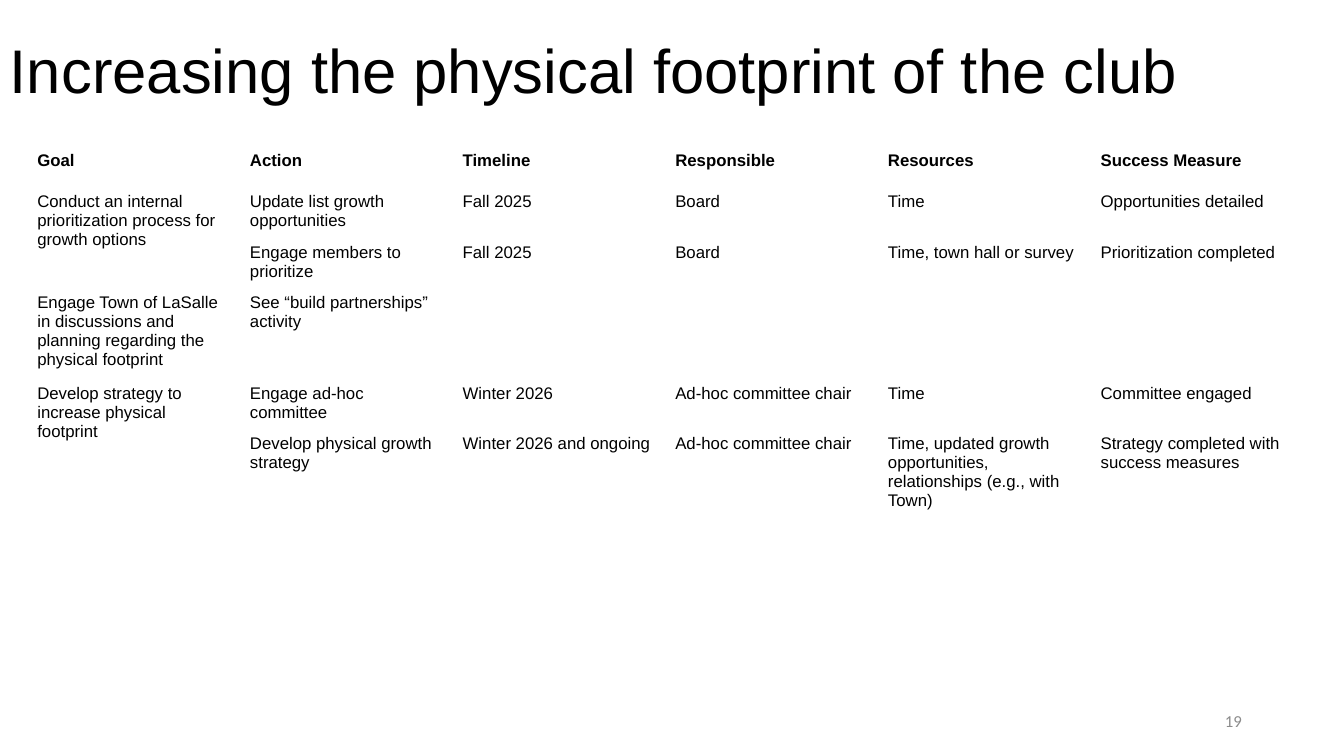
import pptx
import pptx.dml.color
import pptx.enum.text
import pptx.util

Pt = pptx.util.Pt
ALIGN = pptx.enum.text.PP_ALIGN
COLORS = {"text": "000000", "page_number": "8C8C8C"}

HEADINGS = ["Goal", "Action", "Timeline", "Responsible", "Resources", "Success Measure"]
# Each goal spans the rows of its actions.
GOALS = [
    ("Conduct an internal prioritization process for growth options", [
        ["Update list growth opportunities", "Fall 2025", "Board", "Time",
         "Opportunities detailed"],
        ["Engage members to prioritize", "Fall 2025", "Board",
         "Time, town hall or survey", "Prioritization completed"],
    ]),
    ("Engage Town of LaSalle in discussions and planning regarding the physical footprint", [
        ["See “build partnerships” activity", "", "", "", ""],
    ]),
    ("Develop strategy to increase physical footprint", [
        ["Engage ad-hoc committee", "Winter 2026", "Ad-hoc committee chair", "Time",
         "Committee engaged"],
        ["Develop physical growth strategy", "Winter 2026 and ongoing",
         "Ad-hoc committee chair",
         "Time, updated growth opportunities, relationships (e.g., with Town)",
         "Strategy completed with success measures"],
    ]),
]
ROW_HEIGHTS = [29.5, 29.5, 31.7, 32.4, 29.5, 29.5]
COLUMN_WIDTH = 151.92


class PlanSlide:
    def __init__(self, slide):
        self.slide = slide

    def style(self, paragraph, size, font="Arial", color="text", bold=False):
        paragraph.font.size = Pt(size)
        for run in paragraph.runs:
            run.font.size = Pt(size)
            run.font.name = font
            run.font.bold = bold
            run.font.color.rgb = pptx.dml.color.RGBColor.from_string(COLORS[color])

    def text(self, words, left, top, width, height, size, align=ALIGN.LEFT,
             spacing=1.0, **look):
        box = self.slide.shapes.add_textbox(Pt(left), Pt(top), Pt(width), Pt(height))
        frame = box.text_frame
        frame.word_wrap = True
        frame.vertical_anchor = pptx.enum.text.MSO_ANCHOR.MIDDLE
        frame.text = words
        paragraph = frame.paragraphs[0]
        paragraph.alignment = align
        paragraph.line_spacing = spacing
        self.style(paragraph, size, **look)

    def table(self, rows, left, top, height):
        columns = len(rows[0])
        frame = self.slide.shapes.add_table(
            len(rows), columns, Pt(left), Pt(top), Pt(COLUMN_WIDTH * columns), Pt(height))
        plan = frame.table
        plan.first_row = True
        plan.horz_banding = False
        for column in plan.columns:
            column.width = Pt(COLUMN_WIDTH)
        for row, row_height in zip(plan.rows, ROW_HEIGHTS):
            row.height = Pt(row_height)
        frame.height = Pt(height)
        for r, row in enumerate(rows):
            for c, words in enumerate(row):
                cell = plan.cell(r, c)
                cell.fill.background()
                cell.text = words
                self.style(cell.text_frame.paragraphs[0], 12, bold=r == 0)
        return plan


def main():
    deck = pptx.Presentation()
    deck.slide_width, deck.slide_height = Pt(960), Pt(540)
    page = PlanSlide(deck.slides.add_slide(deck.slide_layouts[6]))

    page.text("Increasing the physical footprint of the club", 0, 0, 960, 104.4, 44,
              spacing=0.9)

    rows = [HEADINGS]
    goal_spans = []
    for goal, actions in GOALS:
        goal_spans.append((len(rows), len(rows) + len(actions) - 1))
        for i, action in enumerate(actions):
            rows.append([goal if i == 0 else "", *action])
    plan = page.table(rows, 19.44, 104.4, 267.12)
    for first, last in goal_spans:
        if last > first:
            plan.cell(first, 0).merge(plan.cell(last, 0))

    page.text("19", 678.24, 500.4, 216, 28.8, 12, align=ALIGN.RIGHT,
              font="Calibri", color="page_number")
    deck.save("out.pptx")


if __name__ == "__main__":
    main()
